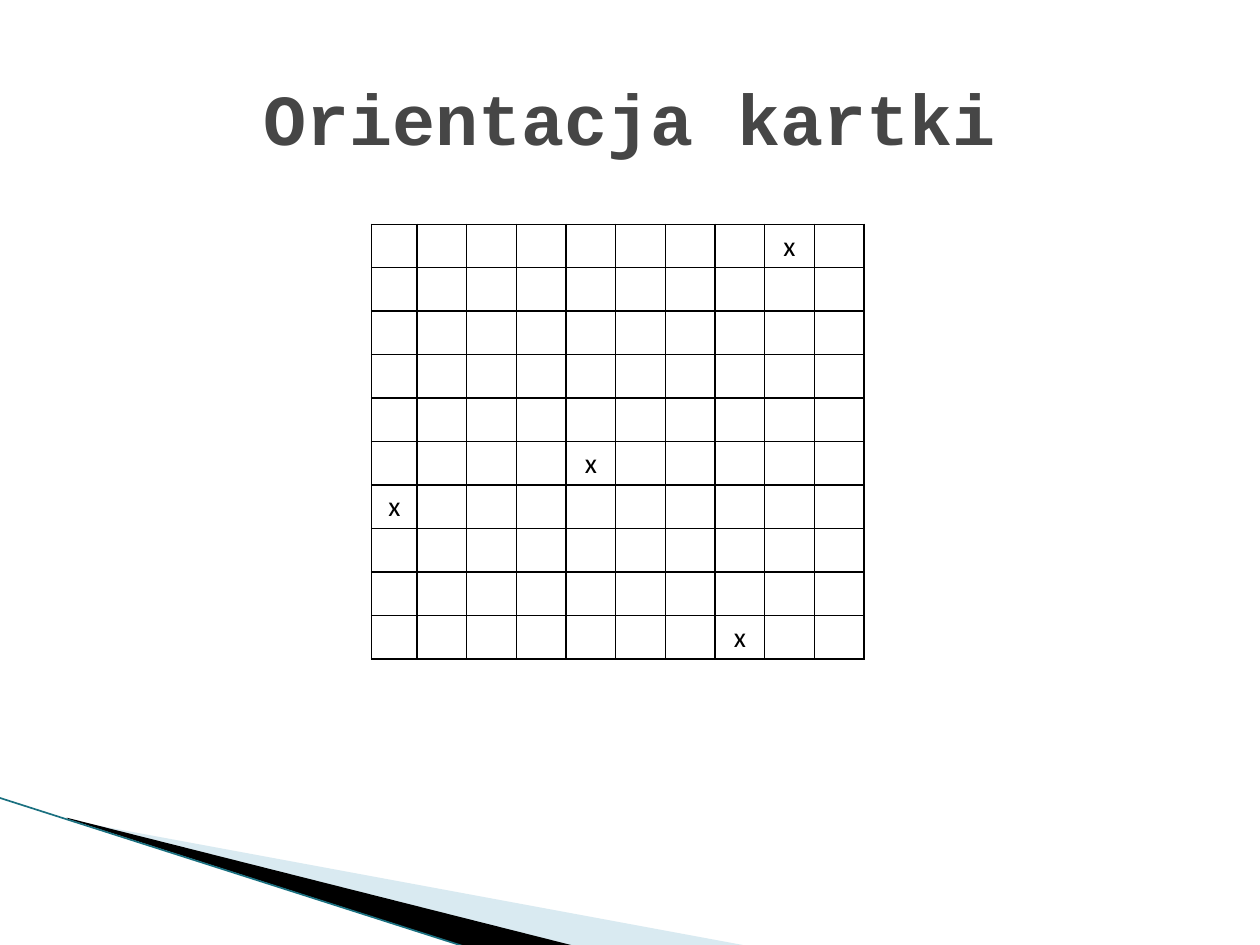
from lxml import etree
from pptx import Presentation
from pptx import util as u
from pptx.dml.color import RGBColor
from pptx.enum import shapes, text
from pptx.oxml import parse_xml
from pptx.oxml.ns import nsdecls, qn

COLORS = {"title": "464646", "ink": "000000", "band": "A0CBDC", "edge": "1A7080"}
FONTS = {"title": "Courier New", "mark": "Calibri"}


def rgb(name):
    return RGBColor.from_string(COLORS[name])


def style(paragraph, font, size, color, bold):
    paragraph.alignment = text.PP_ALIGN.CENTER
    for run in paragraph.runs:
        run.font.name, run.font.size, run.font.bold = font, u.Pt(size), bold
        run.font.color.rgb = rgb(color)


prs = Presentation()
prs.slide_width, prs.slide_height = u.Inches(10), u.Inches(7.5)
slide = prs.slides.add_slide(prs.slide_layouts[6])

# Wedges rising from the bottom edge to the left, in hundredths of an inch
wedges = [
    ("band", 40, [(55, 651), (595, 751), (456, 751), (55, 650)]),
    ("ink", 100, [(53, 649), (457, 751), (372, 752), (54, 650)]),
]
for color, opacity, points in wedges:
    builder = slide.shapes.build_freeform(*points[0], scale=u.Inches(0.01))
    builder.add_line_segments(points[1:], close=True)
    wedge = builder.convert_to_shape()
    wedge.shadow.inherit = False
    wedge.line.fill.background()
    wedge.fill.solid()
    wedge.fill.fore_color.rgb = rgb(color)
    if opacity < 100:
        fill_color = wedge.fill._xPr.find(qn("a:solidFill"))[0]
        etree.SubElement(fill_color, qn("a:alpha"), val=str(opacity * 1000))

edge = slide.shapes.add_connector(
    shapes.MSO_CONNECTOR.STRAIGHT,
    u.Inches(-0.01), u.Inches(6.33), u.Inches(3.71), u.Inches(7.52))
edge.line.color.rgb = rgb("edge")
edge.line.width = u.Pt(0.95)
etree.SubElement(edge._element.spPr, qn("a:effectLst"))

title = slide.shapes.add_textbox(
    u.Inches(0.5), u.Inches(0.3), u.Inches(9), u.Inches(1.25)).text_frame
title.word_wrap = True
title.vertical_anchor = text.MSO_ANCHOR.MIDDLE
title.text = "Orientacja kartki"
style(title.paragraphs[0], FONTS["title"], 41, "title", True)

# Ten by ten sheet with four marked squares, given as (row, column)
SIDE = 10
marks = {(0, 8), (5, 4), (6, 0), (9, 7)}
width, height, first_column = u.Inches(3.91), u.Inches(3.45), u.Inches(0.36)
frame = slide.shapes.add_table(
    SIDE, SIDE, u.Inches(2.95), u.Inches(1.78), width, height)
sheet = frame.table
sheet.first_row = sheet.horz_banding = False
for index, column in enumerate(sheet.columns):
    column.width = (width - first_column) // (SIDE - 1) if index else first_column
for row in sheet.rows:
    row.height = height // SIDE

for row in range(SIDE):
    for column in range(SIDE):
        square = sheet.cell(row, column)
        square.margin_left = square.margin_right = u.Inches(0.07)
        square.margin_top = square.margin_bottom = 0
        if (row, column) in marks:
            square.text_frame.text = "x"
            mark = square.text_frame.paragraphs[0]
            mark.line_spacing = 1.15
            style(mark, FONTS["mark"], 16, "ink", False)
        properties = square._tc.get_or_add_tcPr()
        for side in ("lnL", "lnR", "lnT", "lnB"):
            properties.append(parse_xml(
                f'<a:{side} {nsdecls("a")} w="{u.Pt(1)}"><a:solidFill>'
                f'<a:srgbClr val="{COLORS["ink"]}"/></a:solidFill></a:{side}>'))
        square.fill.background()

prs.save("out.pptx")
